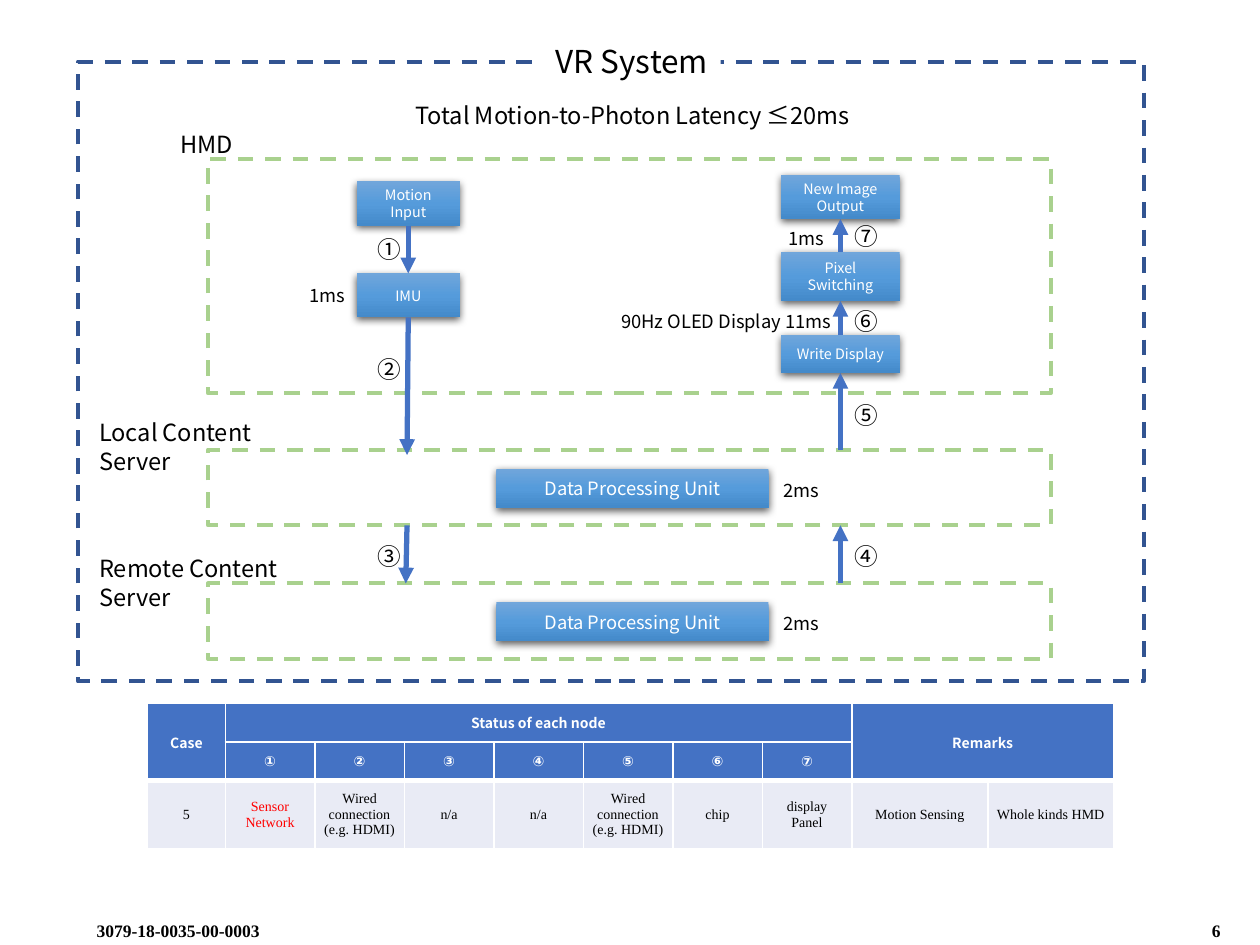
from lxml import etree
from pptx import Presentation
from pptx.dml.color import RGBColor
from pptx.enum.dml import MSO_LINE
from pptx.enum.shapes import MSO_CONNECTOR, MSO_SHAPE
from pptx.enum.text import MSO_ANCHOR, PP_ALIGN
from pptx.oxml import parse_xml
from pptx.oxml.ns import qn
from pptx.util import Pt

STRAIGHT = MSO_CONNECTOR.STRAIGHT
RECTANGLE = MSO_SHAPE.RECTANGLE
DASH = MSO_LINE.DASH
LEFT, CENTER = PP_ALIGN.LEFT, PP_ALIGN.CENTER
TOP, MIDDLE = MSO_ANCHOR.TOP, MSO_ANCHOR.MIDDLE
TOP_SIDE, BOTTOM_SIDE = 0, 2

SANS, SERIF, SYMBOL = "Noto Sans CJK KR", "Times New Roman", "DejaVu Sans"
COLORS = {
    "black": "000000", "white": "FFFFFF", "red": "FF0000",
    "arrow": "4472C4", "zone": "A9D18E", "system": "325491",
    "header": "4472C4", "body": "E9EBF5",
    "node_top": "71A6DB", "node_middle": "559BDB", "node_bottom": "448ACA",
}
NAMESPACE = 'xmlns:a="http://schemas.openxmlformats.org/drawingml/2006/main"'
STEPS = "①②③④⑤⑥⑦"


def rgb(name):
    return RGBColor.from_string(COLORS[name])


def write_text(frame, text, size=13.5, font=SANS, color="black", bold=False,
               align=LEFT, anchor=TOP, wrap=True):
    frame.word_wrap = wrap
    frame.vertical_anchor = anchor
    for index, line in enumerate(text.split("\n")):
        para = frame.paragraphs[0] if index == 0 else frame.add_paragraph()
        para.alignment = align
        span = para.add_run()
        span.text = line
        span.font.size = Pt(size)
        span.font.name = font
        span.font.bold = bold
        span.font.color.rgb = rgb(color)
        properties = span._r.get_or_add_rPr()
        etree.SubElement(properties, qn("a:ea")).set("typeface", font)


def add_label(page, text, left, top, width, height, **style):
    box = page.shapes.add_textbox(Pt(left), Pt(top), Pt(width), Pt(height))
    write_text(box.text_frame, text, **style)
    return box


def add_outline(page, left, top, width, height, color):
    box = page.shapes.add_shape(RECTANGLE, Pt(left), Pt(top), Pt(width), Pt(height))
    box.shadow.inherit = False
    box.fill.background()
    box.line.color.rgb = rgb(color)
    box.line.width = Pt(2.25)
    box.line.dash_style = DASH


def add_node(page, text, left, top, width, height, size=8.2):
    box = page.shapes.add_shape(RECTANGLE, Pt(left), Pt(top), Pt(width), Pt(height))
    stops = "".join(
        f'<a:gs pos="{position}"><a:srgbClr val="{COLORS[name]}"/></a:gs>'
        for position, name in ((0, "node_top"), (50000, "node_middle"), (100000, "node_bottom")))
    properties = box._element.spPr
    properties.append(parse_xml(
        f'<a:gradFill {NAMESPACE} rotWithShape="1"><a:gsLst>{stops}</a:gsLst>'
        '<a:lin ang="5400000" scaled="0"/></a:gradFill>'))
    properties.append(parse_xml(
        f'<a:effectLst {NAMESPACE}><a:outerShdw blurRad="{Pt(4.5)}" dist="{Pt(1.5)}" '
        f'dir="5400000" algn="ctr" rotWithShape="0"><a:srgbClr val="{COLORS["black"]}">'
        '<a:alpha val="63000"/></a:srgbClr></a:outerShdw></a:effectLst>'))
    box.line.fill.background()
    write_text(box.text_frame, text, size=size, color="white", align=CENTER, anchor=MIDDLE)
    return box


def add_arrow(page, start, end, source=None, target=None):
    arrow = page.shapes.add_connector(STRAIGHT, *(Pt(value) for value in start + end))
    if source:
        arrow.begin_connect(*source)
    if target:
        arrow.end_connect(*target)
    arrow.line.color.rgb = rgb("arrow")
    arrow.line.width = Pt(3)
    etree.SubElement(arrow.line._get_or_add_ln(), qn("a:tailEnd")).set("type", "triangle")
    etree.SubElement(arrow._element.spPr, qn("a:effectLst"))


def style_cell(cell, text, fill, bottom=1, inset=(5.2, 2.6), **style):
    properties = cell._tc.get_or_add_tcPr()
    for side, width in (("L", 1), ("R", 1), ("T", 1), ("B", bottom)):
        properties.append(parse_xml(
            f'<a:ln{side} {NAMESPACE} w="{Pt(width)}"><a:solidFill>'
            f'<a:srgbClr val="{COLORS["white"]}"/></a:solidFill></a:ln{side}>'))
    cell.fill.solid()
    cell.fill.fore_color.rgb = rgb(fill)
    cell.margin_left = cell.margin_right = Pt(inset[0])
    cell.margin_top = cell.margin_bottom = Pt(inset[1])
    cell.vertical_anchor = MIDDLE
    if text:
        write_text(cell.text_frame, text, size=8, align=CENTER, anchor=MIDDLE, **style)


def add_status_table(page):
    widths = [44.5] + [51.15] * 7 + [77.7, 72]
    heights = [22, 22, 39]
    table = page.shapes.add_table(
        len(heights), len(widths), Pt(84.3), Pt(402), Pt(sum(widths)), Pt(sum(heights))).table
    table.horz_banding = False
    for column, width in zip(table.columns, widths):
        column.width = Pt(width)
    for row, height in zip(table.rows, heights):
        row.height = Pt(height)
    titles = {0: "Case", 1: "Status of each node", 8: "Remarks"}
    wired = "Wired connection\n(e.g. HDMI)"
    values = ["5", "Sensor\nNetwork", wired, "n/a", "n/a", wired, "chip",
              "display\nPanel", "Motion Sensing", "Whole kinds HMD"]
    for index, value in enumerate(values):
        step = STEPS[index - 1] if 1 <= index <= 7 else ""
        style_cell(table.cell(0, index), titles.get(index, ""), "header",
                   bottom=1 if step else 3, color="white", bold=True)
        style_cell(table.cell(1, index), step, "header", bottom=3,
                   font=SYMBOL, color="white", bold=True)
        style_cell(table.cell(2, index), value, "body", font=SERIF,
                   inset=(3.6, 0.7) if index > 7 else (5.2, 2.6),
                   color="red" if index == 1 else "black")
    for first, last in (((0, 0), (1, 0)), ((0, 1), (0, 7)), ((0, 8), (1, 9))):
        table.cell(*first).merge(table.cell(*last))


def add_system(page):
    add_outline(page, 44.6, 35.2, 609, 354.2, "system")
    for top, height in ((90.7, 134), (257, 43.2), (333.4, 43.2)):
        add_outline(page, 118.8, top, 481.7, height, "zone")
    title = add_label(page, "VR System", 310.3, 20.2, 101.5, 28.8,
                      size=18, align=CENTER, wrap=False)
    title.fill.solid()
    title.fill.fore_color.rgb = rgb("white")
    add_label(page, "Total Motion-to-Photon Latency ≤20ms", 199.4, 54, 324, 23.8, align=CENTER)
    add_label(page, "HMD", 95.8, 70.6, 46.8, 23.8, wrap=False)
    add_label(page, "Local Content Server", 49.7, 235.4, 144, 23.8)
    add_label(page, "Remote Content Server", 49.7, 313.2, 159, 23.8)


def add_flow(page):
    motion = add_node(page, "Motion\nInput", 203.8, 103.7, 59, 25.2)
    imu = add_node(page, "IMU", 203.8, 156.2, 59, 25.2)
    write = add_node(page, "Write Display", 446.4, 191.5, 67.7, 21.6)
    pixel = add_node(page, "Pixel\nSwitching", 446.4, 144, 67.7, 28)
    output = add_node(page, "New Image\nOutput", 446.4, 100, 67.7, 25.2)
    for top in (267.8, 344.2):
        add_node(page, "Data Processing Unit", 283.7, top, 155.5, 22.3, size=10.5)

    down, up = 233.3, 480.25
    add_arrow(page, (down, 128.9), (down, 156.2), (motion, BOTTOM_SIDE), (imu, TOP_SIDE))
    add_arrow(page, (down, 181.4), (232.6, 260), source=(imu, BOTTOM_SIDE))
    add_arrow(page, (232.6, 300.2), (231.9, 333.4))
    add_arrow(page, (up, 333.4), (up, 300.2))
    add_arrow(page, (up, 257), (up, 213.1), target=(write, BOTTOM_SIDE))
    add_arrow(page, (up, 191.5), (up, 172), (write, TOP_SIDE), (pixel, BOTTOM_SIDE))
    add_arrow(page, (up, 144), (up, 125.2), (pixel, TOP_SIDE), (output, BOTTOM_SIDE))

    for index, top in enumerate((131, 199.4, 306, 306, 225.4, 172, 123.1)):
        left = 208.8 if index < 3 else 481
        add_label(page, STEPS[index], left, top, 28, 23.8, wrap=False)
    for text, left, top, width in (
            ("1ms", 434.2, 126, 52.6), ("1ms", 160.6, 159.1, 52.6),
            ("2ms", 439.2, 270, 37.4), ("2ms", 439.2, 346.3, 37.4)):
        add_label(page, text, left, top, width, 20.2, size=10.5, align=CENTER)
    add_label(page, "90Hz OLED Display 11ms", 347, 173.5, 136, 20.2,
              size=10.5, align=CENTER, wrap=False)


def main():
    deck = Presentation()
    deck.slide_width, deck.slide_height = Pt(720), Pt(540)
    page = deck.slides.add_slide(deck.slide_layouts[6])
    add_system(page)
    add_flow(page)
    add_status_table(page)
    for text, left, width in (("3079-18-0035-00-0003", 48.2, 378), ("6", 685.4, 34.6)):
        add_label(page, text, left, 522, width, 18, size=10, font=SERIF, bold=True)
    deck.save("out.pptx")


if __name__ == "__main__":
    main()
